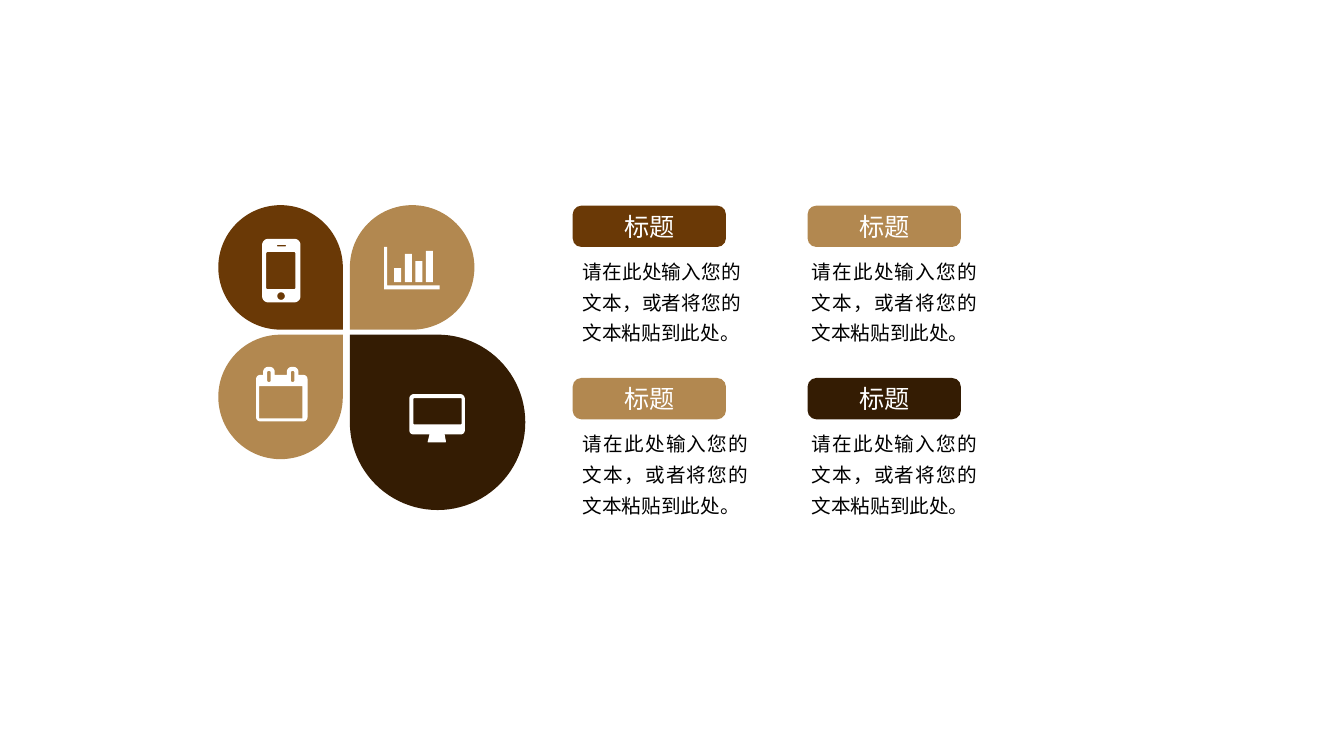
from math import dist, sqrt

from pptx import Presentation
from pptx.dml.color import RGBColor
from pptx.enum.shapes import MSO_SHAPE
from pptx.enum.text import MSO_ANCHOR, MSO_AUTO_SIZE, PP_ALIGN
from pptx.util import Inches, Pt

BROWN, TAN, DARK, WHITE, BLACK = "6A3906", "B28850", "341C03", "FFFFFF", "000000"
CELL = 0.1
BODY_TEXT = "请在此处输入您的文本，或者将您的文本粘贴到此处。"


def color(hex_code):
    return RGBColor.from_string(hex_code)


def grid(*cells):
    return [Inches(cell * CELL) for cell in cells]


def box(left, top, right, bottom, radius=0):
    return [(left, top, radius), (right, top, radius),
            (right, bottom, radius), (left, bottom, radius)]


def toward(corner, other, length):
    share = length / dist(corner, other)
    return [a + (b - a) * share for a, b in zip(corner, other)]


def rounded(corners, steps=8):
    points = []
    for index, (x, y, radius) in enumerate(corners):
        corner = (x, y)
        if not radius:
            points.append(corner)
            continue
        start = toward(corner, corners[index - 1][:2], radius)
        end = toward(corner, corners[(index + 1) % len(corners)][:2], radius)
        for step in range(steps + 1):
            t = step / steps
            weights = ((1 - t) ** 2, sqrt(2) * t * (1 - t), t ** 2)
            points.append(tuple(
                sum(w * p for w, p in zip(weights, values)) / sum(weights)
                for values in zip(start, corner, end)))
    return points


class Canvas:
    font_name = "Arial"

    def __init__(self, slide):
        self.shapes = slide.shapes

    def paint(self, shape, fill):
        shape.shadow.inherit = False
        shape.fill.solid()
        shape.fill.fore_color.rgb = color(fill)
        shape.line.fill.background()

    def set_text(self, frame, text, size, fill, align):
        frame.word_wrap = True
        paragraph = frame.paragraphs[0]
        paragraph.text = text
        paragraph.alignment = align
        paragraph.font.name = self.font_name
        paragraph.font.size = Pt(size)
        paragraph.font.color.rgb = color(fill)
        return paragraph

    def petal(self, left, top, size, rotation, fill):
        shape = self.shapes.add_shape(MSO_SHAPE.TEAR, *grid(left, top, size, size))
        shape.rotation = rotation
        self.paint(shape, fill)

    def icon(self, *contours):
        builder = None
        for contour in contours:
            points = [grid(*point) for point in rounded(contour)]
            if builder is None:
                builder = self.shapes.build_freeform(*points[0], scale=1.0)
            else:
                builder.move_to(*points[0])
            builder.add_line_segments(points[1:], close=True)
        self.paint(builder.convert_to_shape(), WHITE)

    def label(self, left, top, text, fill):
        shape = self.shapes.add_shape(MSO_SHAPE.ROUNDED_RECTANGLE, *grid(left, top, 15.2, 4.1))
        shape.adjustments[0] = 0.21
        self.paint(shape, fill)
        shape.text_frame.vertical_anchor = MSO_ANCHOR.MIDDLE
        self.set_text(shape.text_frame, text, 18, WHITE, PP_ALIGN.CENTER)

    def body(self, left, top, width, text):
        frame = self.shapes.add_textbox(*grid(left, top, width, 10.2)).text_frame
        self.set_text(frame, text, 14, BLACK, PP_ALIGN.JUSTIFY).line_spacing = 1.3
        frame.auto_size = MSO_AUTO_SIZE.SHAPE_TO_FIT_TEXT


def draw_petals(canvas):
    center_x, center_y, gap_x, gap_y = 34.35, 32.95, 0.35, 0.25
    for right, below, size, rotation, fill in (
            (True, True, 17.4, 270, DARK), (True, False, 12.35, 180, TAN),
            (False, True, 12.35, 0, TAN), (False, False, 12.35, 90, BROWN)):
        left = center_x + gap_x if right else center_x - gap_x - size
        top = center_y + gap_y if below else center_y - gap_y - size
        canvas.petal(left, top, size, rotation, fill)


def draw_calendar(canvas):
    outline, slots = [(25.4, 37.2, 0.4)], []
    for left in (26.1, 28.45):
        right = left + 1.15
        outline += [(left, 37.2, 0), (left, 36.4, 0.5), (right, 36.4, 0.5), (right, 37.2, 0)]
        slots.append(box(left + 0.4, 36.8, right - 0.4, 37.9, 0.15))
    outline += [(30.5, 37.2, 0.4), (30.5, 41.8, 0.4), (25.4, 41.8, 0.4)]
    canvas.icon(outline, box(25.7, 38.3, 30, 41.5), *slots)


def draw_monitor(canvas):
    outline = [(40.6, 39.1, 0.45), (46.1, 39.1, 0.45), (46.1, 43.1, 0.4),
               (44.1, 43.1, 0), (44.25, 43.9, 0.1), (42.4, 43.9, 0.1),
               (42.6, 43.1, 0), (40.6, 43.1, 0.4)]
    canvas.icon(outline, box(41, 39.5, 45.8, 42.1, 0.1))


def draw_bar_chart(canvas):
    axes = [(x, y, 0) for x, y in ((38.1, 24.5), (38.4, 24.5), (38.4, 28.3),
                                   (43.6, 28.3), (43.6, 28.7), (38.1, 28.7))]
    bars = [box(39.1 + 1.05 * i, top, 39.8 + 1.05 * i, 28)
            for i, top in enumerate((26.6, 25.2, 25.9, 24.9))]
    canvas.icon(axes, *bars)


def draw_phone(canvas):
    canvas.icon(box(26, 23.7, 29.8, 30, 0.6), box(26.4, 25, 29.3, 28.7, 0.15),
                box(27.5, 24.3, 28.35, 24.45), box(27.5, 29, 28.25, 29.75, 0.37))


def draw_texts(canvas):
    for label_left, body_left, top, width, fill in (
            (56.8, 56.8, 20.4, 17.7, BROWN), (80.1, 79.5, 20.4, 18.4, TAN),
            (56.8, 56.8, 37.5, 18.4, TAN), (80.1, 79.5, 37.5, 18.4, DARK)):
        canvas.label(label_left, top, "标题", fill)
        canvas.body(body_left, top + 4.2, width, BODY_TEXT)


def main():
    presentation = Presentation()
    presentation.slide_width, presentation.slide_height = Inches(13.33), Inches(7.5)
    canvas = Canvas(presentation.slides.add_slide(presentation.slide_layouts[6]))
    for draw in (draw_petals, draw_calendar, draw_monitor, draw_bar_chart, draw_phone, draw_texts):
        draw(canvas)
    presentation.save("out.pptx")


if __name__ == "__main__":
    main()
